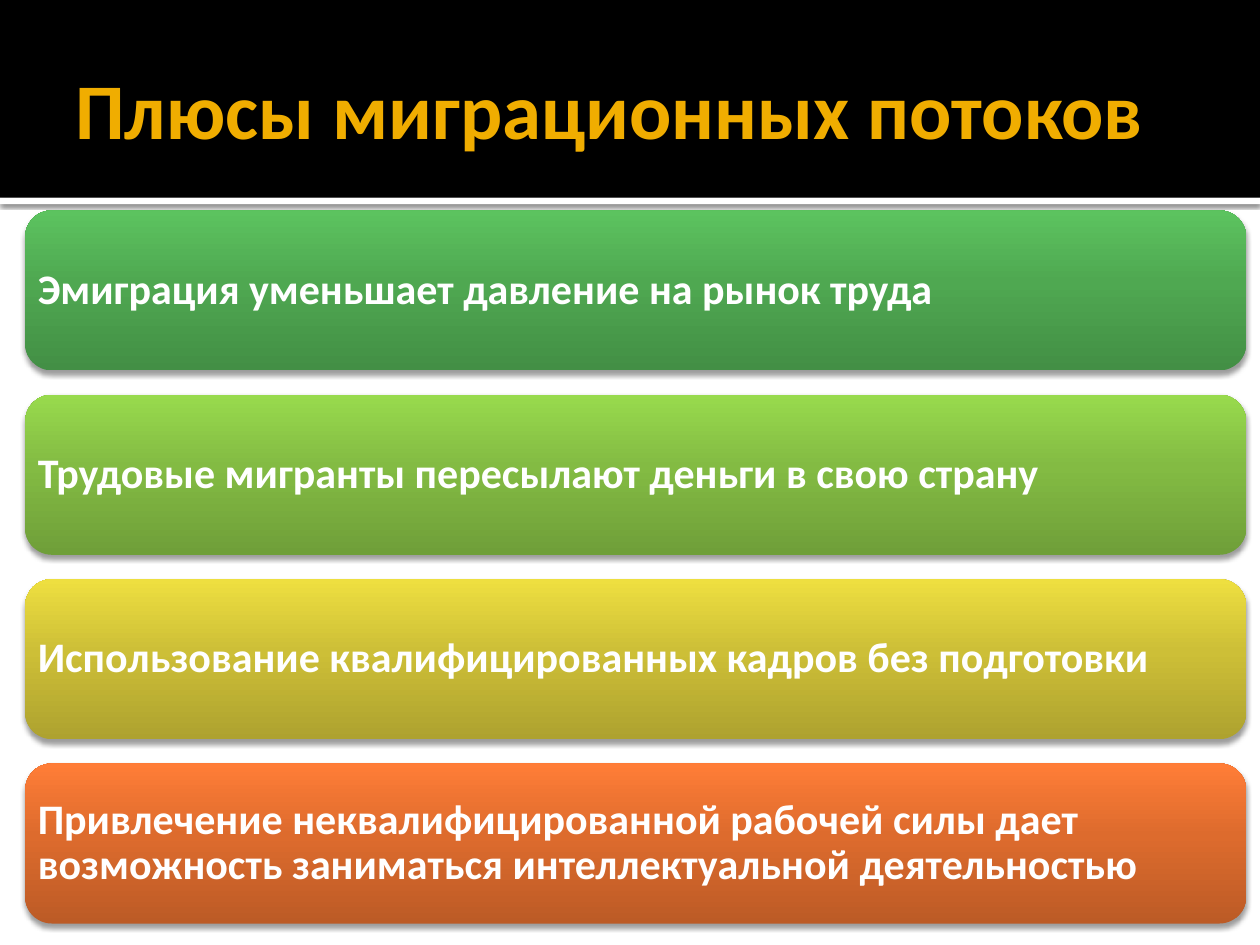
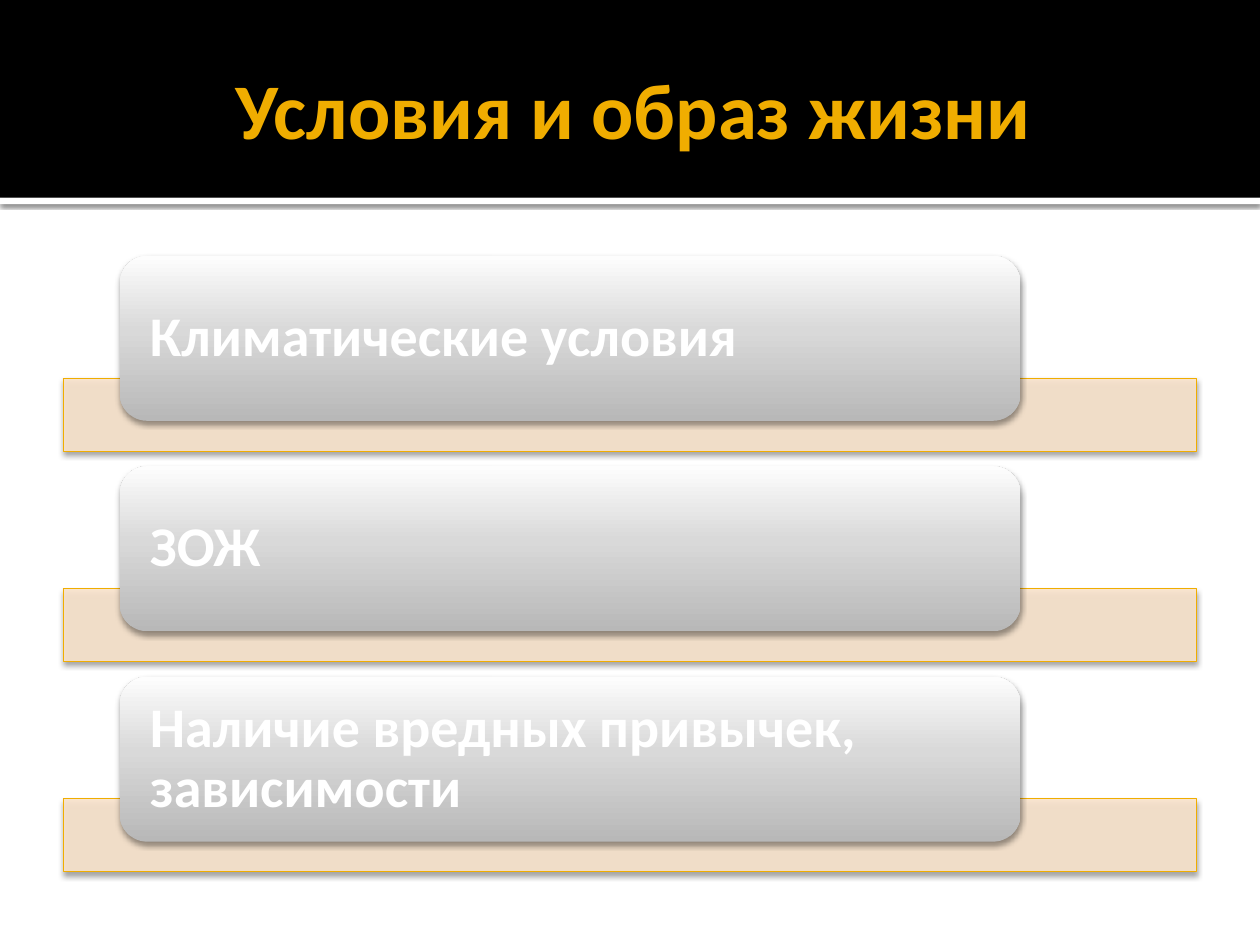
import math

import pptx
import pptx.dml.color
import pptx.enum.shapes
import pptx.enum.text
import pptx.oxml
import pptx.oxml.ns
import pptx.util
from pptx.dml.color import RGBColor
from pptx.util import Inches

FONT = "Calibri"
BLACK = RGBColor(0x00, 0x00, 0x00)
WHITE = RGBColor(0xFF, 0xFF, 0xFF)
GOLD = RGBColor(0xF0, 0xAD, 0x00)
PEACH = RGBColor(0xF9, 0xE3, 0xCC)

# Gradients run from the bottom edge to the top edge
GRADIENT_STOPS = (0, 55, 100)
GREEN = (RGBColor(0x43, 0x8F, 0x45), RGBColor(0x4F, 0xA8, 0x51), RGBColor(0x5C, 0xC3, 0x5F))
LIME = (RGBColor(0x6F, 0x9F, 0x39), RGBColor(0x83, 0xBB, 0x43), RGBColor(0x98, 0xDA, 0x4D))
YELLOW = (RGBColor(0xAE, 0xA2, 0x2F), RGBColor(0xCD, 0xBF, 0x37), RGBColor(0xEE, 0xDF, 0x40))
ORANGE = (RGBColor(0xBC, 0x5B, 0x26), RGBColor(0xDD, 0x6B, 0x2D), RGBColor(0xFF, 0x7D, 0x37))
GREY = (RGBColor(0xB8, 0xB8, 0xB8), RGBColor(0xD9, 0xD9, 0xD9), RGBColor(0xFD, 0xFD, 0xFD))

# Opacity in percent, blur and distance in points
CARD_SHADOW = (38, 3.1, 2)
RULE_SHADOW = (60, 2.5, 0.8)

RECTANGLE = pptx.enum.shapes.MSO_SHAPE.RECTANGLE
ROUNDED = pptx.enum.shapes.MSO_SHAPE.ROUNDED_RECTANGLE
LEFT = pptx.enum.text.PP_ALIGN.LEFT
CENTER = pptx.enum.text.PP_ALIGN.CENTER


def make_element(xml):
    namespace = pptx.oxml.ns.nsdecls("a")
    return pptx.oxml.parse_xml(xml.replace(" ", f" {namespace} ", 1))


class Deck:
    """Holds the shared style and the current slide."""

    def __init__(self):
        self.presentation = pptx.Presentation()
        self.presentation.slide_width = Inches(10)
        self.presentation.slide_height = Inches(7.5)
        self.slide = None

    def new_slide(self, title, alignment=LEFT):
        self.slide = self.presentation.slides.add_slide(self.presentation.slide_layouts[6])
        # Header band with the white rule below it
        self.box(RECTANGLE, (0, 1.57, 10, 0.05), WHITE, RULE_SHADOW)
        self.box(RECTANGLE, (0, 0, 10, 1.57), BLACK)
        heading = self.slide.shapes.add_textbox(*map(Inches, (0.5, 0.17, 9, 1.37)))
        self.set_text(heading, title, 45, GOLD, (0.1, 0.05, 0.05, 0.05), alignment)

    def box(self, kind, place, color, shadow=None):
        shape = self.slide.shapes.add_shape(kind, *map(Inches, place))
        shape.fill.solid()
        shape.fill.fore_color.rgb = color
        shape.line.fill.background()
        shape.shadow.inherit = False
        if shadow:
            opacity, blur, distance = shadow
            effects = shape.element.spPr.find(pptx.oxml.ns.qn("a:effectLst"))
            effects.append(make_element(
                f'<a:outerShdw blurRad="{pptx.util.Pt(blur)}" dist="{pptx.util.Pt(distance)}"'
                f' dir="5400000" algn="ctr" rotWithShape="0"><a:srgbClr val="{BLACK}">'
                f'<a:alpha val="{opacity * 1000}"/></a:srgbClr></a:outerShdw>'))
        return shape

    def bar(self, place):
        shape = self.box(RECTANGLE, place, PEACH, CARD_SHADOW)
        color = shape.element.spPr.find(".//" + pptx.oxml.ns.qn("a:srgbClr"))
        color.append(make_element('<a:alpha val="90000"/>'))
        shape.line.color.rgb = GOLD
        shape.line.width = pptx.util.Pt(0.5)

    def card(self, place, gradient, text, size, margin_x, margin_y):
        shape = self.box(ROUNDED, place, gradient[0], CARD_SHADOW)
        shape.fill.gradient()
        shape.fill.gradient_angle = 90
        stops = shape.element.spPr.find(".//" + pptx.oxml.ns.qn("a:gsLst"))
        for stop in list(stops):
            stops.remove(stop)
        for position, color in zip(GRADIENT_STOPS, gradient):
            stops.append(make_element(
                f'<a:gs pos="{position * 1000}"><a:srgbClr val="{color}"/></a:gs>'))
        # Rounded corners already push the text area inwards
        corner = place[3] * shape.adjustments[0] * (1 - math.sqrt(0.5))
        x, y = max(margin_x - corner, 0), max(margin_y - corner, 0)
        self.set_text(shape, text, size, WHITE, (x, y, x, y), line_spacing=0.9)

    def set_text(self, shape, text, size, color, margins, alignment=LEFT, line_spacing=1.0):
        frame = shape.text_frame
        frame.word_wrap = True
        frame.vertical_anchor = pptx.enum.text.MSO_ANCHOR.MIDDLE
        (frame.margin_left, frame.margin_top,
         frame.margin_right, frame.margin_bottom) = map(Inches, margins)
        paragraph = frame.paragraphs[0]
        paragraph.alignment = alignment
        paragraph.line_spacing = line_spacing
        run = paragraph.add_run()
        run.text = text
        run.font.name = FONT
        run.font.size = pptx.util.Pt(size)
        run.font.bold = True
        run.font.color.rgb = color


def add_migration_benefits(deck):
    deck.new_slide("Плюсы миграционных потоков")
    benefits = (
        ("Эмиграция уменьшает давление на рынок труда", GREEN),
        ("Трудовые мигранты пересылают деньги в свою страну", LIME),
        ("Использование квалифицированных кадров без подготовки", YELLOW),
        ("Привлечение неквалифицированной рабочей силы дает возможность "
         "заниматься интеллектуальной деятельностью", ORANGE),
    )
    top, bottom, height = 1.67, 7.33, 1.27
    pitch = (bottom - height - top) / (len(benefits) - 1)
    for index, (text, gradient) in enumerate(benefits):
        deck.card((0.2, top + index * pitch, 9.69, height), gradient, text, 24, 0.1, 0.1)


def add_living_conditions(deck):
    deck.new_slide("Условия и образ жизни", CENTER)
    conditions = ("Климатические условия", "ЗОЖ", "Наличие вредных привычек, зависимости")
    card_top, bar_offset, pitch = 2.03, 0.97, 1.67
    for index, text in enumerate(conditions):
        top = card_top + index * pitch
        deck.bar((0.5, top + bar_offset, 9, 0.58))
        deck.card((0.95, top, 7.15, 1.31), GREY, text, 32, 0.24, 0)


def main():
    deck = Deck()
    add_migration_benefits(deck)
    add_living_conditions(deck)
    deck.presentation.save("out.pptx")


if __name__ == "__main__":
    main()
